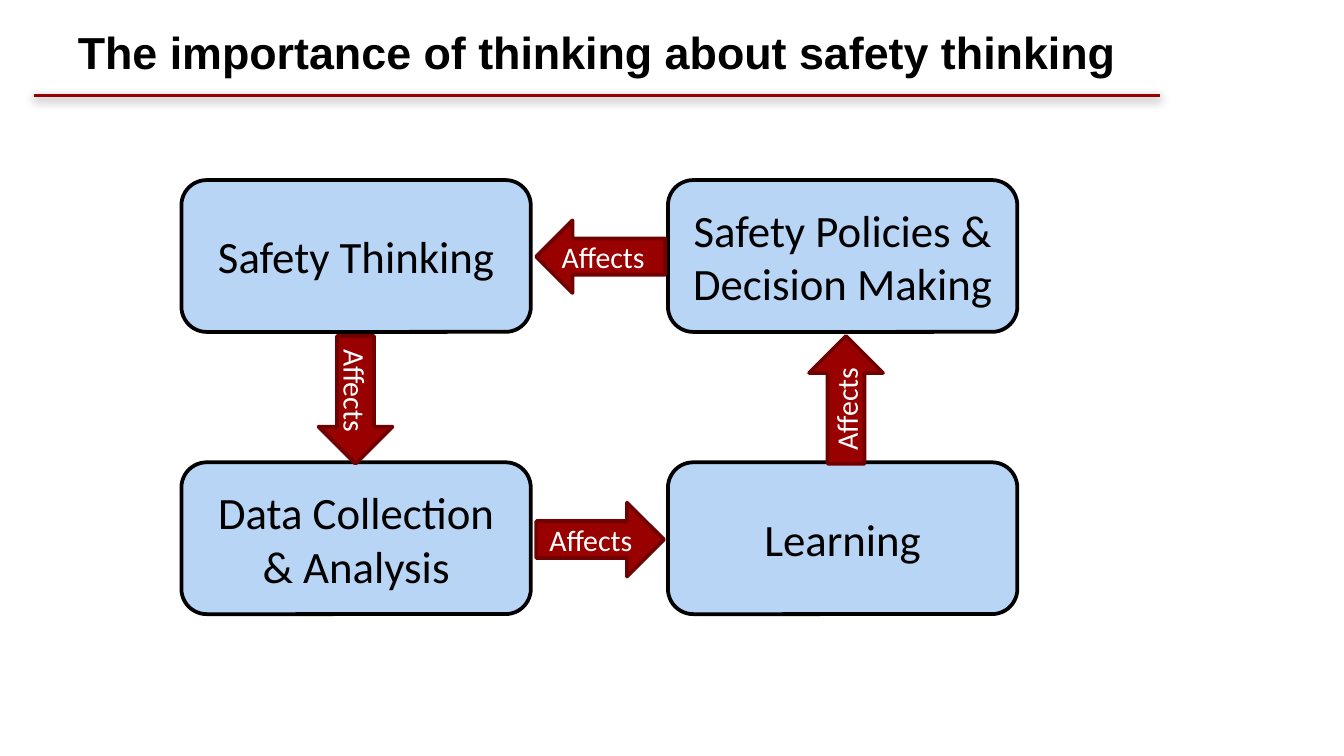
import pptx
import pptx.util
import pptx.dml.color
import pptx.enum.shapes
import pptx.enum.text
import pptx.oxml
from pptx.util import Inches

RGBColor = pptx.dml.color.RGBColor
SHAPE = pptx.enum.shapes.MSO_SHAPE

BLACK = RGBColor(0x00, 0x00, 0x00)
WHITE = RGBColor(0xFF, 0xFF, 0xFF)
LIGHT_BLUE = RGBColor(0xB8, 0xD5, 0xF5)
RED = RGBColor(0x99, 0x00, 0x00)
DARK_RED = RGBColor(0x71, 0x00, 0x00)

# Content
TITLE = "The importance of thinking about safety thinking"
STAGES = [  # label, column, row
    ("Safety Thinking", 0, 0),
    ("Data Collection & Analysis", 0, 1),
    ("Learning", 1, 1),
    ("Safety Policies & Decision Making ", 1, 0),
]
ARROW_LABEL = "Affects"
ARROWS = [  # preset, rotation, left, top, width, height, right inset
    (SHAPE.RIGHT_ARROW, 90, 2.17, 2.7, 0.95, 0.55, 0),
    (SHAPE.RIGHT_ARROW, 270, 5.82, 2.7, 0.95, 0.55, 0),
    (SHAPE.RIGHT_ARROW, 0, 3.99, 3.74, 0.95, 0.55, 0),
    (SHAPE.LEFT_ARROW, 0, 3.99, 1.64, 0.96, 0.54, 0.1),
]

# Layout
LEFT, TOP = 1.35, 1.34
STAGE_W, STAGE_H = 2.6, 1.13
COLUMN_STEP, ROW_STEP = 3.62, 2.1

RULE_SHADOW = (
    '<a:effectLst xmlns:a="http://schemas.openxmlformats.org/drawingml/2006/main">'
    '<a:outerShdw blurRad="63500" dist="20320" dir="5400000" rotWithShape="0">'
    '<a:srgbClr val="000000"><a:alpha val="38000"/></a:srgbClr>'
    '</a:outerShdw></a:effectLst>'
)


def write(frame, text, size, font, color, bold=False):
    frame.word_wrap = True
    frame.vertical_anchor = pptx.enum.text.MSO_ANCHOR.MIDDLE
    paragraph = frame.paragraphs[0]
    paragraph.alignment = pptx.enum.text.PP_ALIGN.CENTER
    run = paragraph.add_run()
    run.text = text
    run.font.size = pptx.util.Pt(size)
    run.font.name = font
    run.font.bold = bold
    run.font.color.rgb = color


def add_block(slide, preset, x, y, w, h, fill, outline):
    block = slide.shapes.add_shape(preset, Inches(x), Inches(y), Inches(w), Inches(h))
    block.shadow.inherit = False
    block.fill.solid()
    block.fill.fore_color.rgb = fill
    block.line.color.rgb = outline
    block.line.width = pptx.util.Pt(2)
    return block


def main():
    deck = pptx.Presentation()
    deck.slide_width = Inches(10)
    deck.slide_height = deck.slide_width * 9 // 16
    slide = deck.slides.add_slide(deck.slide_layouts[5])

    # Title and the rule below it
    title = slide.shapes.title
    title.left, title.top = Inches(0.25), Inches(0.13)
    title.width, title.height = Inches(8.38), Inches(0.51)
    write(title.text_frame, TITLE, 24, "Arial", BLACK, bold=True)

    rule = slide.shapes.add_connector(
        pptx.enum.shapes.MSO_CONNECTOR.STRAIGHT,
        Inches(0.25), Inches(0.71), Inches(8.63), Inches(0.71))
    rule.line.color.rgb = RED
    rule.line.width = pptx.util.Pt(2)
    rule._element.spPr.append(pptx.oxml.parse_xml(RULE_SHADOW))

    # Stages of the cycle
    for label, column, row in STAGES:
        stage = add_block(slide, SHAPE.ROUNDED_RECTANGLE,
                          LEFT + column * COLUMN_STEP, TOP + row * ROW_STEP,
                          STAGE_W, STAGE_H, LIGHT_BLUE, BLACK)
        write(stage.text_frame, label, 24, "Calibri", BLACK)

    # Arrows between the stages
    for preset, rotation, x, y, w, h, right_inset in ARROWS:
        arrow = add_block(slide, preset, x, y, w, h, RED, DARK_RED)
        arrow.rotation = rotation
        arrow.text_frame.margin_left = 0
        arrow.text_frame.margin_right = Inches(right_inset)
        write(arrow.text_frame, ARROW_LABEL, 16, "Calibri", WHITE)

    deck.save("out.pptx")


if __name__ == "__main__":
    main()
